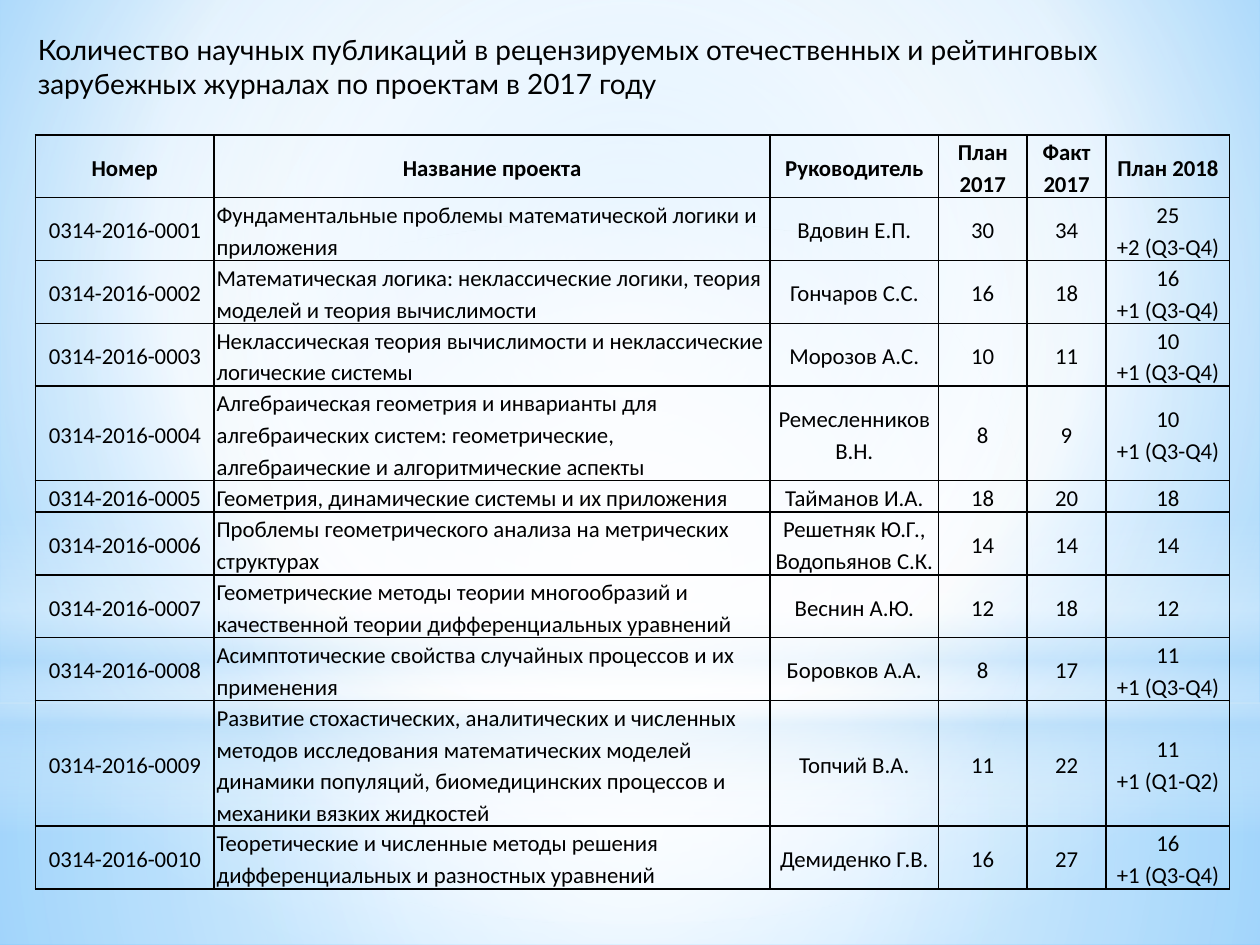
import lxml.etree
import pptx
import pptx.dml.color
import pptx.enum.shapes
import pptx.enum.text
import pptx.oxml.ns
import pptx.oxml.xmlchemy
import pptx.util

RGBColor = pptx.dml.color.RGBColor
MSO_SHAPE = pptx.enum.shapes.MSO_SHAPE
PP_ALIGN = pptx.enum.text.PP_ALIGN
MSO_ANCHOR = pptx.enum.text.MSO_ANCHOR
qn = pptx.oxml.ns.qn

BLACK = RGBColor(0x00, 0x00, 0x00)
WHITE = RGBColor(0xFF, 0xFF, 0xFF)
MIST = RGBColor(0xB4, 0xDC, 0xFA)
SKY = RGBColor(0x9E, 0xD5, 0xFF)
AZURE = RGBColor(0x5B, 0xB9, 0xFF)

CENTER = (50, 50, 50, 50)
COLUMNS = [14.2, 44.1, 13.4, 7, 6.3, 9.8]
ROW_LINES = [2, 2, 2, 2, 3, 1, 2, 2, 2, 4, 2]
TABLE_HEIGHT = 59.8
HEADER = ["Номер", "Название проекта", "Руководитель", "План 2017", "Факт 2017", "План 2018"]
PROJECTS = [
    ("Фундаментальные проблемы математической логики и приложения",
     "Вдовин Е.П.", "30", "34", "25\n+2 (Q3-Q4)"),
    ("Математическая логика: неклассические логики, теория моделей и теория вычислимости",
     "Гончаров С.С.", "16", "18", "16\n+1 (Q3-Q4)"),
    ("Неклассическая теория вычислимости и неклассические логические системы",
     "Морозов А.С.", "10", "11", "10\n+1 (Q3-Q4)"),
    ("Алгебраическая геометрия и инварианты для алгебраических систем: "
     "геометрические, алгебраические и алгоритмические аспекты",
     "Ремесленников В.Н.", "8", "9", "10\n+1 (Q3-Q4)"),
    ("Геометрия, динамические системы и их приложения",
     "Тайманов И.А.", "18", "20", "18"),
    ("Проблемы геометрического анализа на метрических структурах",
     "Решетняк Ю.Г., Водопьянов С.К.", "14", "14", "14"),
    ("Геометрические методы теории многообразий и качественной теории "
     "дифференциальных уравнений",
     "Веснин А.Ю.", "12", "18", "12"),
    ("Асимптотические свойства случайных процессов и их применения",
     "Боровков А.А.", "8", "17", "11\n+1 (Q3-Q4)"),
    ("Развитие стохастических, аналитических и численных методов исследования "
     "математических моделей динамики популяций, биомедицинских процессов и "
     "механики вязких жидкостей",
     "Топчий В.А.", "11", "22", "11\n+1 (Q1-Q2)"),
    ("Теоретические и численные методы решения дифференциальных и разностных уравнений",
     "Демиденко Г.В.", "16", "27", "16\n+1 (Q3-Q4)"),
]


class Deck:
    grid_columns, grid_rows = 100, 75
    title_font, title_size = "Lato", 16
    table_font, table_size = "Calibri", 13
    line_spacing, border, inset = 1.15, 1, 0.02

    def __init__(self, width, height):
        self.prs = pptx.Presentation()
        self.prs.slide_width = pptx.util.Inches(width)
        self.prs.slide_height = pptx.util.Inches(height)
        self.s = self.prs.slides.add_slide(self.prs.slide_layouts[5])

    def x(self, columns):
        return round(self.prs.slide_width * columns / self.grid_columns)

    def y(self, rows):
        return round(self.prs.slide_height * rows / self.grid_rows)

    def box(self, left, top, width, height):
        return self.x(left), self.y(top), self.x(width), self.y(height)

    def gradient(self, element, stops, center=None, angle=0):
        old = element.find(".//" + qn("a:solidFill"))
        grad = pptx.oxml.xmlchemy.OxmlElement("a:gradFill")
        grad.set("rotWithShape", "1")
        gs_list = lxml.etree.SubElement(grad, qn("a:gsLst"))
        for position, color, opacity in stops:
            gs = lxml.etree.SubElement(gs_list, qn("a:gs"), pos=str(position * 1000))
            clr = lxml.etree.SubElement(gs, qn("a:srgbClr"), val=str(color))
            if opacity < 100:
                lxml.etree.SubElement(clr, qn("a:alpha"), val=str(opacity * 1000))
        if center:
            focus = lxml.etree.SubElement(grad, qn("a:path"), path="circle")
            sides = {k: str(v * 1000) for k, v in zip("ltrb", center)}
            lxml.etree.SubElement(focus, qn("a:fillToRect"), **sides)
        else:
            lxml.etree.SubElement(grad, qn("a:lin"), ang=str(angle * 60000), scaled="0")
        old.getparent().replace(old, grad)

    def background(self, stops, center):
        self.s.background.fill.solid()
        self.s.background.fill.fore_color.rgb = WHITE
        self.gradient(self.s._element.find(".//" + qn("p:bgPr")), stops, center)

    def glow(self, shape, place, stops, center=None, angle=0):
        sp = self.s.shapes.add_shape(shape, *self.box(*place))
        sp.shadow.inherit = False
        sp.line.fill.background()
        sp.fill.solid()
        sp.fill.fore_color.rgb = WHITE
        self.gradient(sp._element.spPr, stops, center, angle)

    def run(self, p, text, font, size, bold=False):
        r = p.add_run()
        r.text = text
        r.font.name = font
        r.font.size = pptx.util.Pt(size)
        r.font.bold = bold
        r.font.color.rgb = BLACK

    def title(self, text, place):
        sp = self.s.shapes.title
        self.s.shapes._spTree.append(sp._element)
        sp.left, sp.top, sp.width, sp.height = self.box(*place)
        tf = sp.text_frame
        tf.word_wrap = True
        tf.auto_size = pptx.enum.text.MSO_AUTO_SIZE.SHAPE_TO_FIT_TEXT
        tf.vertical_anchor = MSO_ANCHOR.TOP
        p = tf.paragraphs[0]
        p.alignment = PP_ALIGN.LEFT
        self.run(p, text, self.title_font, self.title_size)

    def cell(self, cell, text, align, bold):
        cell.fill.background()
        cell.vertical_anchor = MSO_ANCHOR.MIDDLE
        cell.margin_left = cell.margin_right = pptx.util.Inches(self.inset)
        cell.margin_top = cell.margin_bottom = 0
        for i, line in enumerate(text.split("\n")):
            tf = cell.text_frame
            p = tf.add_paragraph() if i else tf.paragraphs[0]
            p.alignment = align
            p.line_spacing = self.line_spacing
            self.run(p, line, self.table_font, self.table_size, bold)
        tc_pr = cell._tc.get_or_add_tcPr()
        for i, side in enumerate(("a:lnL", "a:lnR", "a:lnT", "a:lnB")):
            ln = pptx.oxml.xmlchemy.OxmlElement(side)
            ln.set("w", str(int(pptx.util.Pt(self.border))))
            fill = lxml.etree.SubElement(ln, qn("a:solidFill"))
            lxml.etree.SubElement(fill, qn("a:srgbClr"), val=str(BLACK))
            tc_pr.insert(i, ln)

    def table(self, rows, left, top, widths, heights):
        place = self.box(left, top, sum(widths), sum(heights))
        table = self.s.shapes.add_table(len(rows), len(widths), *place).table
        table.first_row = table.horz_banding = False
        for column, width in zip(table.columns, widths):
            column.width = self.x(width)
        for i, (row, height) in enumerate(zip(rows, heights)):
            table.rows[i].height = self.y(height)
            for j, text in enumerate(row):
                align = PP_ALIGN.LEFT if i and j == 1 else PP_ALIGN.CENTER
                self.cell(table.cell(i, j), text, align, bold=i == 0)


def main():
    deck = Deck(10, 7.5)
    deck.background([(0, SKY, 100), (60, WHITE, 100), (100, AZURE, 100)], (20, 10, 20, 60))
    deck.glow(MSO_SHAPE.RECTANGLE, (0, 55.8, 100, 19.2),
              [(0, WHITE, 91), (37, WHITE, 76), (100, MIST, 79)], CENTER)
    deck.glow(MSO_SHAPE.RECTANGLE, (0, 0, 100, 55.8),
              [(0, WHITE, 89), (48, WHITE, 62), (100, MIST, 79)], CENTER)
    deck.glow(MSO_SHAPE.RECTANGLE, (0, 41.2, 100, 25),
              [(0, WHITE, 0), (29, WHITE, 30), (45, MIST, 40),
               (55, WHITE, 26), (65, MIST, 60), (100, WHITE, 0)], angle=90)
    deck.glow(MSO_SHAPE.OVAL, (0, 17.5, 100, 55.8),
              [(0, WHITE, 100), (56, WHITE, 0)], CENTER)
    deck.title("Количество научных публикаций в рецензируемых отечественных и рейтинговых "
               "зарубежных журналах по проектам в 2017 году", (2, 2.1, 95.3, 6.4))
    rows = [HEADER] + [(f"0314-2016-{n:04}", *project) for n, project in enumerate(PROJECTS, 1)]
    line = TABLE_HEIGHT / sum(ROW_LINES)
    deck.table(rows, 2.8, 10.7, COLUMNS, [n * line for n in ROW_LINES])
    deck.prs.save("out.pptx")


if __name__ == "__main__":
    main()
